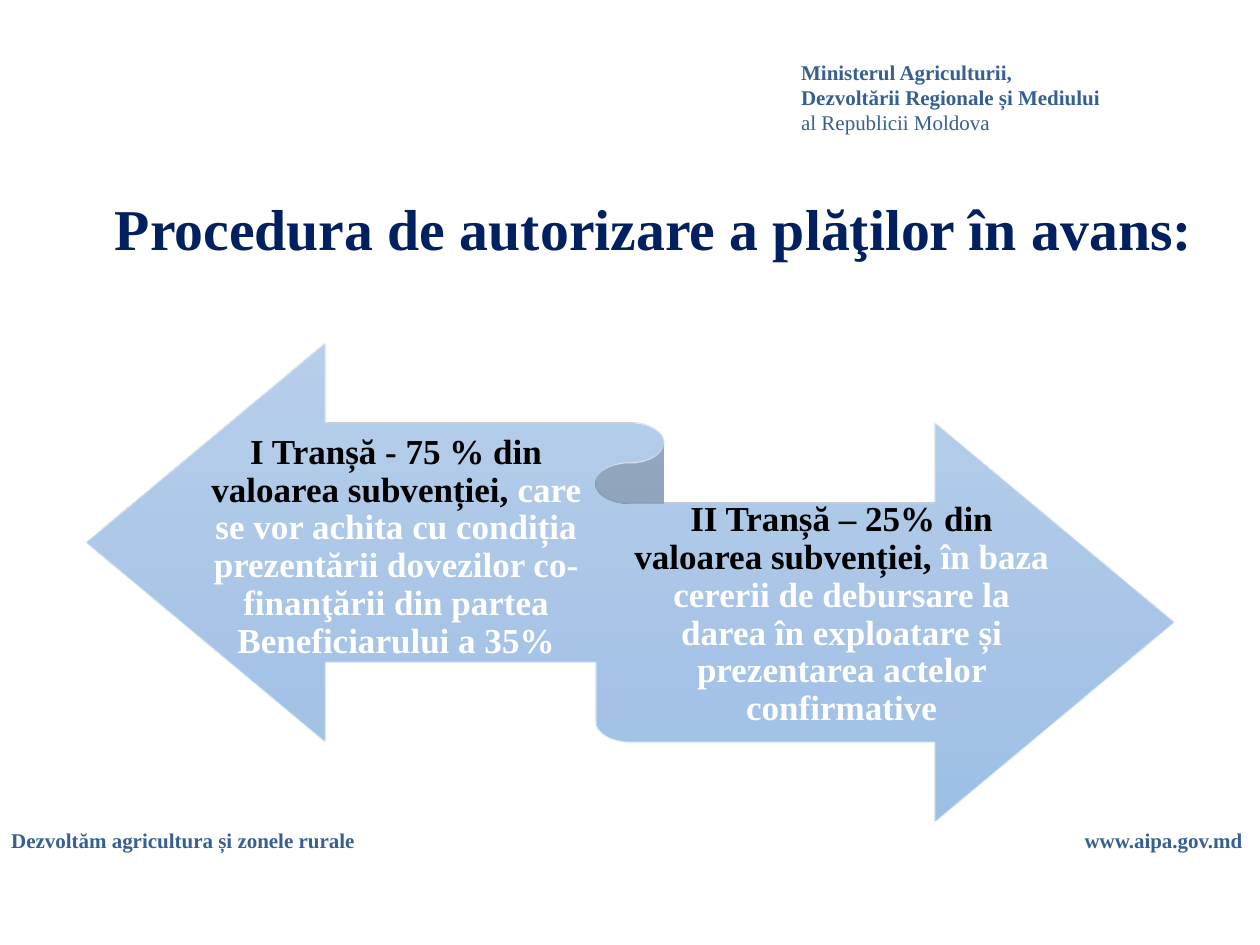
from dataclasses import dataclass

from lxml.etree import SubElement
from pptx import Presentation
from pptx.dml.color import RGBColor
from pptx.enum.shapes import MSO_SHAPE as Shape
from pptx.enum.text import MSO_ANCHOR as Anchor, PP_ALIGN as Align
from pptx.oxml.ns import qn
from pptx.util import Inches, Pt

COLUMNS, ROWS = 100, 75
CELL = Inches(0.1)


@dataclass(frozen=True)
class Theme:
    """Colours, font and type sizes of the deck."""
    font: str = "Times New Roman"
    agency: str = "376092"
    heading: str = "002060"
    lead: str = "000000"
    detail: str = "FFFFFF"
    ribbon: tuple = ("B1CBE9", "A3C1E5", "93B9E4")
    ribbon_opacity: int = 90
    small: int = 12
    body: int = 20
    large: int = 33


@dataclass(frozen=True)
class Box:
    """A rectangle in grid columns and rows."""
    left: float
    top: float
    width: float
    height: float

    def inner(self, left, top, width, height):
        """Return a box offset from this box's corner."""
        return Box(self.left + left, self.top + top, width, height)

    def lengths(self):
        """Return the rectangle as slide lengths."""
        cells = (self.left, self.top, self.width, self.height)
        return [round(cell * CELL) for cell in cells]


THEME = Theme()


def add_text(page, box, paras, size, align=Align.LEFT, anchor=Anchor.TOP,
             spacing=None, insets=(1, 0.5, 1, 0.5), wrap=True):
    """Place paragraphs, each a list of (text, colour, bold) spans."""
    frame = page.shapes.add_textbox(*box.lengths()).text_frame
    frame.word_wrap = wrap
    frame.vertical_anchor = anchor
    (frame.margin_left, frame.margin_top,
     frame.margin_right, frame.margin_bottom) = [round(inset * CELL) for inset in insets]
    for index, spans in enumerate(paras):
        para = frame.add_paragraph() if index else frame.paragraphs[0]
        para.alignment = align
        para.line_spacing = spacing
        for text, colour, bold in spans:
            span = para.add_run()
            span.text = text
            span.font.name = THEME.font
            span.font.size = Pt(size)
            span.font.bold = bold
            span.font.color.rgb = RGBColor.from_string(colour)


def fill_gradient(shape, colours, opacity):
    """Fill a shape from top to bottom with evenly spaced translucent stops."""
    shape.fill.gradient()
    shape.fill.gradient_angle = 270
    stops = shape.fill._fill._gradFill.find(qn("a:gsLst"))
    for stop in list(stops):
        stops.remove(stop)
    for index, colour in enumerate(colours):
        position = index * 100000 // (len(colours) - 1)
        stop = SubElement(stops, qn("a:gs"), pos=str(position))
        paint = SubElement(stop, qn("a:srgbClr"), val=colour)
        SubElement(paint, qn("a:alpha"), val=str(opacity * 1000))


def add_ministry(page, box):
    """Place the ministry's name."""
    add_text(page, box, [
        [("Ministerul Agriculturii, Dezvoltării Regionale și Mediului", THEME.agency, True)],
        [("al Republicii Moldova", THEME.agency, False)],
    ], THEME.small, insets=(1, 0.5, 1.5, 0.5))


def add_footer(page, box):
    """Place the motto at the left and the web address at the right."""
    address_width = 14.7
    motto = box.inner(0, 0, 60.2, box.height)
    address = box.inner(box.width - address_width, 0, address_width, box.height)
    add_text(page, motto, [[("Dezvoltăm agricultura și zonele rurale", THEME.agency, True)]],
             THEME.small)
    add_text(page, address, [[("www.aipa.gov.md", THEME.agency, True)]],
             THEME.small, Align.CENTER, wrap=False)


def add_title(page, box):
    """Place the slide's title."""
    add_text(page, box,
             [[("Procedura de autorizare a plăţilor în avans:", THEME.heading, True)]],
             THEME.large, Align.CENTER, Anchor.MIDDLE, 0.9)


def add_tranches(page, box):
    """Place the two-way ribbon with one payment tranche on each arm."""
    ribbon = page.shapes.add_shape(Shape.LEFT_RIGHT_RIBBON, *box.lengths())
    ribbon.shadow.inherit = False
    ribbon.line.fill.background()
    fill_gradient(ribbon, THEME.ribbon, THEME.ribbon_opacity)
    arms = [
        (box.inner(8.7, 3.9, 31.7, 24.5), Anchor.MIDDLE, (0, 0.8, 0, 0.8),
         "I Tranșă - 75 % din valoarea subvenției, ",
         "care se vor achita cu condiția prezentării dovezilor co-finanţării "
         "din partea Beneficiarului a 35%"),
        (box.inner(43.1, 9.4, 33.6, 20), Anchor.TOP, (0, 3.1, 0, 0),
         "II Tranșă – 25% din valoarea subvenției, ",
         "în baza cererii de debursare la darea în exploatare și "
         "prezentarea actelor confirmative"),
    ]
    for arm, anchor, insets, lead, detail in arms:
        add_text(page, arm, [[(lead, THEME.lead, True), (detail, THEME.detail, True)]],
                 THEME.body, Align.CENTER, anchor, 0.9, insets)


def main():
    """Build and save the deck."""
    deck = Presentation()
    deck.slide_width, deck.slide_height = COLUMNS * CELL, ROWS * CELL
    page = deck.slides.add_slide(deck.slide_layouts[6])
    add_footer(page, Box(-0.1, 65.2, 99.8, 3))
    add_ministry(page, Box(62.6, 4.2, 26.9, 7.1))
    add_title(page, Box(6.9, 13.3, 90, 10.2))
    add_tranches(page, Box(6.9, 27.3, 86.2, 37.9))
    deck.save("out.pptx")


if __name__ == "__main__":
    main()
